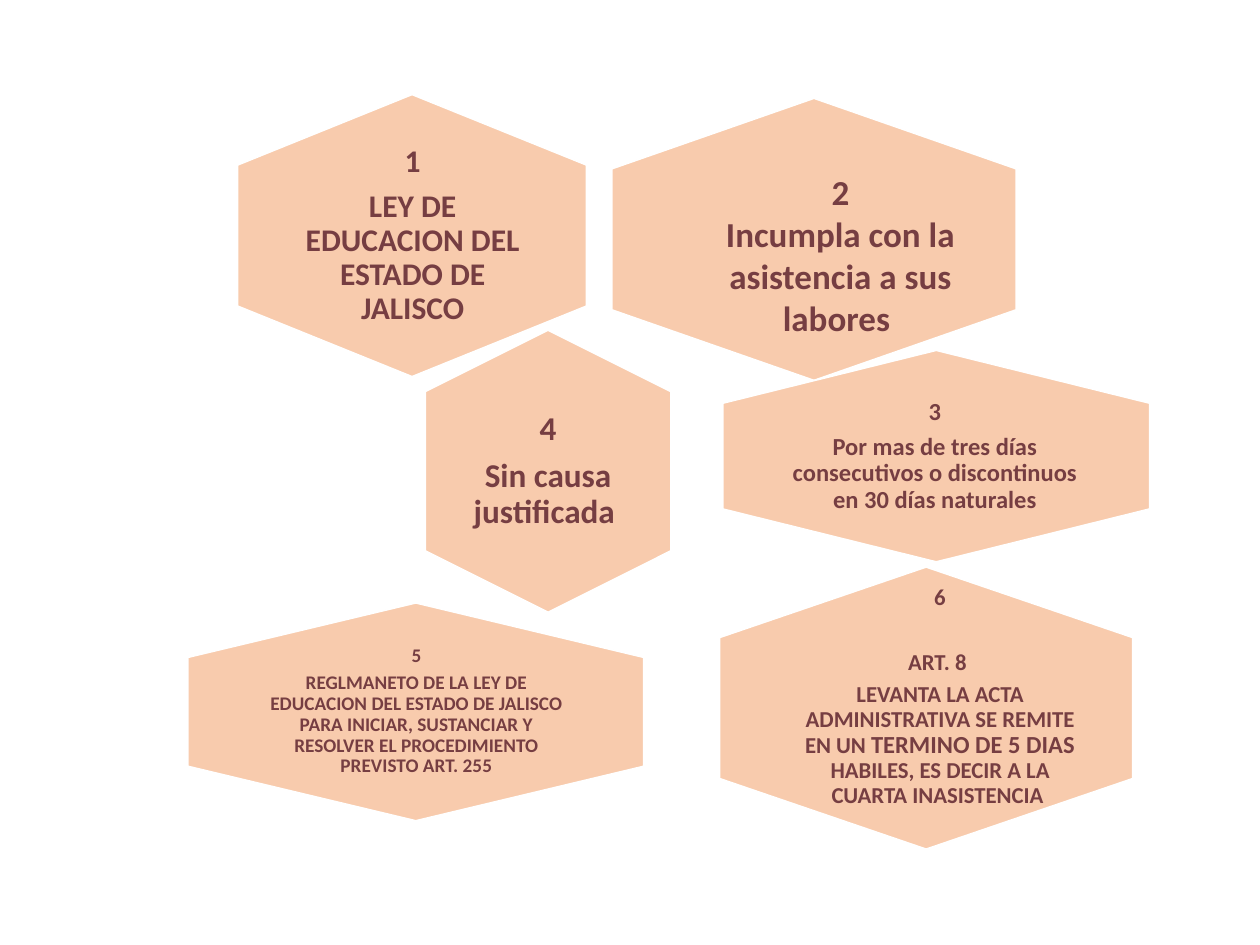
"""Build a slide of six numbered hexagons on unexcused absences."""
from pptx import Presentation
from pptx.dml.color import RGBColor
from pptx.enum.shapes import MSO_SHAPE as SHAPE
from pptx.enum.text import MSO_ANCHOR as ANCHOR, PP_ALIGN as ALIGN
from pptx.util import Inches, Pt

PEACH, WINE, WHITE = "F8CBAD", "763E42", "FFFFFF"
FONT = "Calibri"


def color(value):
    """Turn a hex string into a colour."""
    return RGBColor.from_string(value)


def add_hexagon(slide, cx, cy, width, height):
    """Add a hexagon with its points up and down, centred on cx, cy."""
    sp = slide.shapes.add_shape(
        SHAPE.HEXAGON, Inches(cx - height / 2), Inches(cy - width / 2),
        Inches(height), Inches(width))
    sp.rotation = 90
    sp.shadow.inherit = False
    sp.fill.solid()
    sp.fill.fore_color.rgb = color(PEACH)
    sp.line.color.rgb = color(WHITE)
    sp.line.width = Pt(1)


def add_label(slide, box, inset, size, paragraphs, compact=True, gaps=()):
    """Add centred text; gaps maps a paragraph index to its space before."""
    tf = slide.shapes.add_textbox(*map(Inches, box)).text_frame
    tf.word_wrap = True
    tf.vertical_anchor = ANCHOR.MIDDLE
    tf.margin_left = tf.margin_right = Inches(inset)
    tf.margin_top = tf.margin_bottom = Inches(inset)
    gaps = dict(gaps)
    for i, runs in enumerate(paragraphs):
        p = tf.add_paragraph() if i else tf.paragraphs[0]
        p.alignment = ALIGN.CENTER
        if compact:
            p.line_spacing = 0.9
            p.space_after = Pt(round(size * 0.35, 2))
        if i in gaps:
            p.space_before = Pt(gaps[i])
        for text, run_size in runs:
            add_run(p, text, run_size or size)


def add_run(p, text, size):
    """Add one bold run."""
    r = p.add_run()
    r.text = text
    r.font.name = FONT
    r.font.size = Pt(size)
    r.font.bold = True
    r.font.color.rgb = color(WINE)


def plain(*texts):
    """Make one single-run paragraph of each text."""
    return [[(text, None)] for text in texts]


def main():
    """Build and save the slide."""
    prs = Presentation()
    prs.slide_width, prs.slide_height = Inches(10), Inches(7.5)
    slide = prs.slides.add_slide(prs.slide_layouts[6])

    add_hexagon(slide, 6.46, 1.9, 3.21, 2.24)
    add_label(slide, (5.42, 1.35, 2.5, 1.34), 0.05, 20,
              plain("2", "Incumpla con la asistencia a sus labores "),
              compact=False)

    add_hexagon(slide, 3.27, 1.87, 2.77, 2.24)
    add_label(slide, (2.35, 1.12, 1.85, 1.5), 0, 18,
              plain("1", "LEY DE EDUCACION DEL ESTADO DE JALISCO"))

    add_hexagon(slide, 4.35, 3.74, 1.95, 2.24)
    add_label(slide, (3.68, 2.97, 1.34, 1.54), 0.08, 19,
              plain("4", "Sin causa justificada "))

    add_hexagon(slide, 7.43, 3.62, 3.39, 1.68)
    add_label(slide, (6.29, 3.06, 2.26, 1.12), 0, 14,
              plain("3", "Por mas de tres días consecutivos o "
                         "discontinuos en 30 días naturales"))

    add_hexagon(slide, 7.35, 5.62, 3.28, 2.24)
    record = [("LEVANTA LA ACTA ADMINISTRATIVA SE REMITE EN UN ", None),
              ("TERMINO DE 5 DIAS ", 14),
              ("HABILES, ES DECIR A LA CUARTA INASISTENCIA ", None)]
    add_label(slide, (6.32, 4.6, 2.28, 1.86), 0.05, 13,
              plain("6", "ART. 8 ") + [record], gaps={1: 18.5})

    add_hexagon(slide, 3.3, 5.65, 3.62, 1.73)
    add_label(slide, (2.1, 5.07, 2.41, 1.15), 0, 11,
              plain("5", "REGLMANETO DE LA LEY DE EDUCACION DEL ESTADO DE "
                         "JALISCO PARA INICIAR, SUSTANCIAR Y RESOLVER EL "
                         "PROCEDIMIENTO PREVISTO ART. 255"))

    prs.save("out.pptx")


if __name__ == "__main__":
    main()
